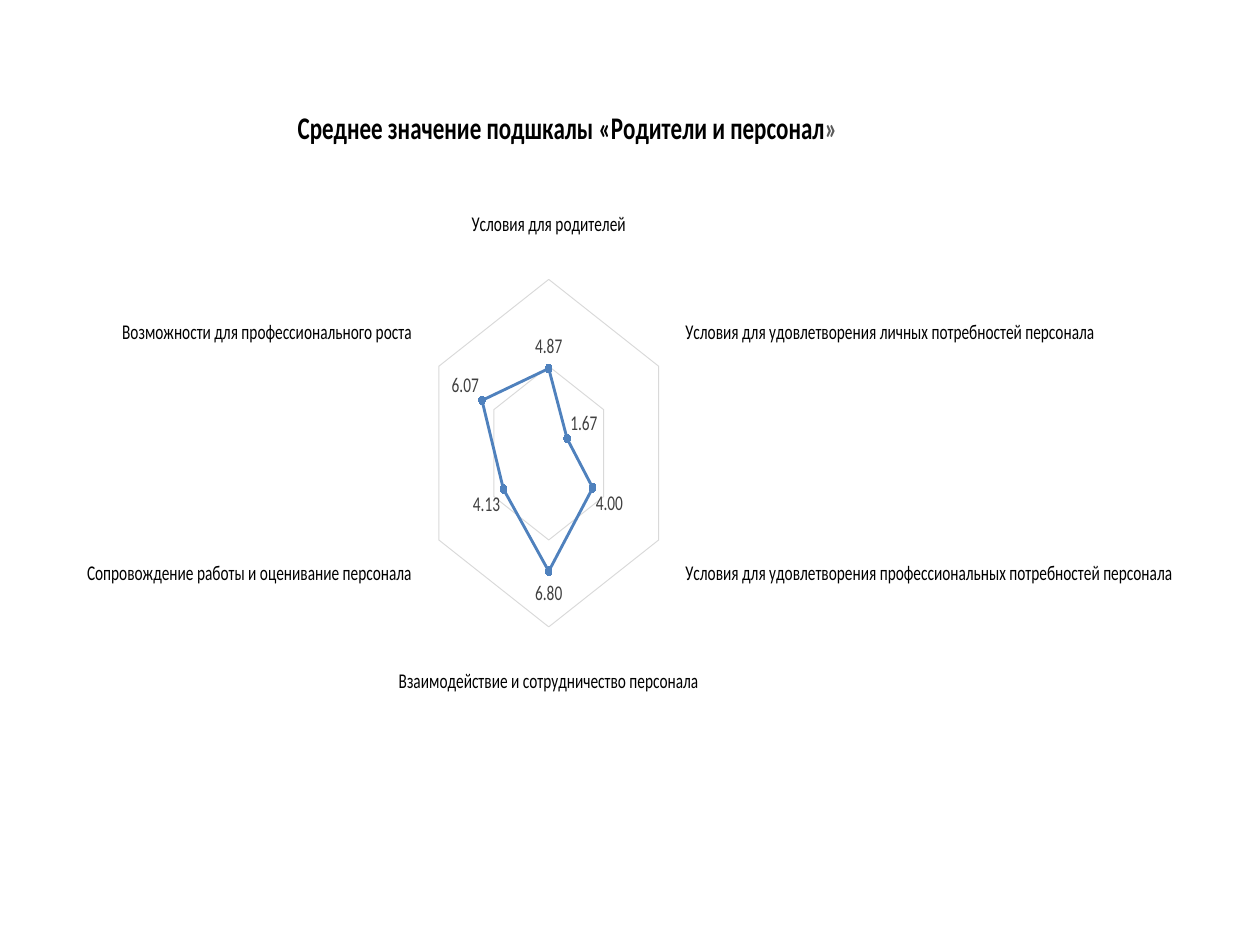
"""Builds a slide with a radar chart of the mean scores for parents and staff."""
from dataclasses import dataclass

from lxml import etree
from pptx import Presentation
from pptx import util as u
from pptx.chart import data as chart_data
from pptx.dml.color import RGBColor
from pptx.enum import chart as ch
from pptx.oxml import ns


@dataclass(frozen=True)
class Theme:
    """Colours, font and type sizes of the slide."""
    font: str = "Calibri"
    ink: str = "000000"
    label: str = "404040"
    quote: str = "595959"
    grid: str = "D9D9D9"
    series: str = "4F81BD"
    marker: str = "F79646"
    base_size: int = 10
    label_size: int = 12
    title_size: int = 18


THEME = Theme()
HEADING = "Среднее значение подшкалы «Родители и персонал"
SCORES = {
    "Условия для родителей": 4.87,
    "Условия для удовлетворения личных потребностей персонала": 1.67,
    "Условия для удовлетворения профессиональных потребностей персонала": 4.00,
    "Взаимодействие и сотрудничество персонала": 6.80,
    "Сопровождение работы и оценивание персонала": 4.13,
    "Возможности для профессионального роста": 6.07,
}


def style_font(font, size, color, bold=False):
    """Apply the theme typeface with a size, colour and weight."""
    font.name, font.size, font.bold = THEME.font, u.Pt(size), bold
    font.color.rgb = RGBColor.from_string(color)


def style_line(line, color, width):
    """Give a line a solid colour and a width in points."""
    line.color.rgb = RGBColor.from_string(color)
    line.width = u.Pt(width)


def place(element, **settings):
    """Set the manual layout of a chart part as fractions of the chart."""
    layout = element.find(ns.qn("c:layout"))
    if layout is None:
        layout = etree.Element(ns.qn("c:layout"))
        has_text = element.find(ns.qn("c:tx")) is not None
        element.insert(1 if has_text else 0, layout)
    manual = etree.SubElement(layout, ns.qn("c:manualLayout"))
    for name, value in settings.items():
        etree.SubElement(manual, ns.qn(f"c:{name}")).set("val", str(value))


def add_heading(chart):
    """Write the chart title with its lighter closing quote."""
    chart.has_title = True
    paragraph = chart.chart_title.text_frame.paragraphs[0]
    for wording, color in ((HEADING, THEME.ink), ("»", THEME.quote)):
        run = paragraph.add_run()
        run.text = wording
        style_font(run.font, THEME.title_size, color, bold=True)
    place(chart.chart_title._element, xMode="edge", yMode="edge", x=0.18, y=0.07)


def style_axes(chart):
    """Format the category names, the web and the hidden score axis."""
    categories, scores = chart.category_axis, chart.value_axis
    style_font(categories.tick_labels.font, THEME.label_size, THEME.ink)
    style_line(categories.format.line, THEME.grid, 0.75)
    for axis in (categories, scores):
        axis.has_major_gridlines = True
        style_line(axis.major_gridlines.format.line, THEME.grid, 0.75)
        axis.major_tick_mark = ch.XL_TICK_MARK.NONE
    scores.minimum_scale, scores.maximum_scale, scores.major_unit = 0, 10, 5
    scores.visible = False


def style_scores(series):
    """Format the score line, its markers and its value labels."""
    series.smooth = False
    style_line(series.format.line, THEME.series, 2.25)
    marker = series.marker
    marker.style, marker.size = ch.XL_MARKER_STYLE.CIRCLE, 5
    marker.format.fill.solid()
    marker.format.fill.fore_color.rgb = RGBColor.from_string(THEME.marker)
    style_line(marker.format.line, THEME.marker, 0.75)
    labels = series.data_labels
    labels.show_value = True
    labels.number_format, labels.number_format_is_linked = "0.00", False
    style_font(labels.font, THEME.label_size, THEME.label)


def add_radar(slide):
    """Add the radar chart of mean scores."""
    data = chart_data.CategoryChartData(number_format="0.00")
    data.categories = list(SCORES)
    data.add_series("Series 1", list(SCORES.values()))
    chart = slide.shapes.add_chart(
        ch.XL_CHART_TYPE.RADAR_MARKERS, u.Inches(0.69), u.Inches(0.36),
        u.Inches(8.62), u.Inches(6.54), data).chart
    style_font(chart.font, THEME.base_size, THEME.ink)
    chart.has_legend = False
    add_heading(chart)
    style_axes(chart)
    plot = chart.plots[0]
    plot.vary_by_categories = False
    style_scores(plot.series[0])
    place(plot._element.getparent(), layoutTarget="inner", xMode="edge",
          yMode="edge", x=0.34, y=0.11, w=0.32, h=0.77)


def main():
    """Build and save the presentation."""
    deck = Presentation()
    deck.slide_width, deck.slide_height = u.Inches(10), u.Inches(7.5)
    add_radar(deck.slides.add_slide(deck.slide_layouts.get_by_name("Blank")))
    deck.save("out.pptx")


if __name__ == "__main__":
    main()
